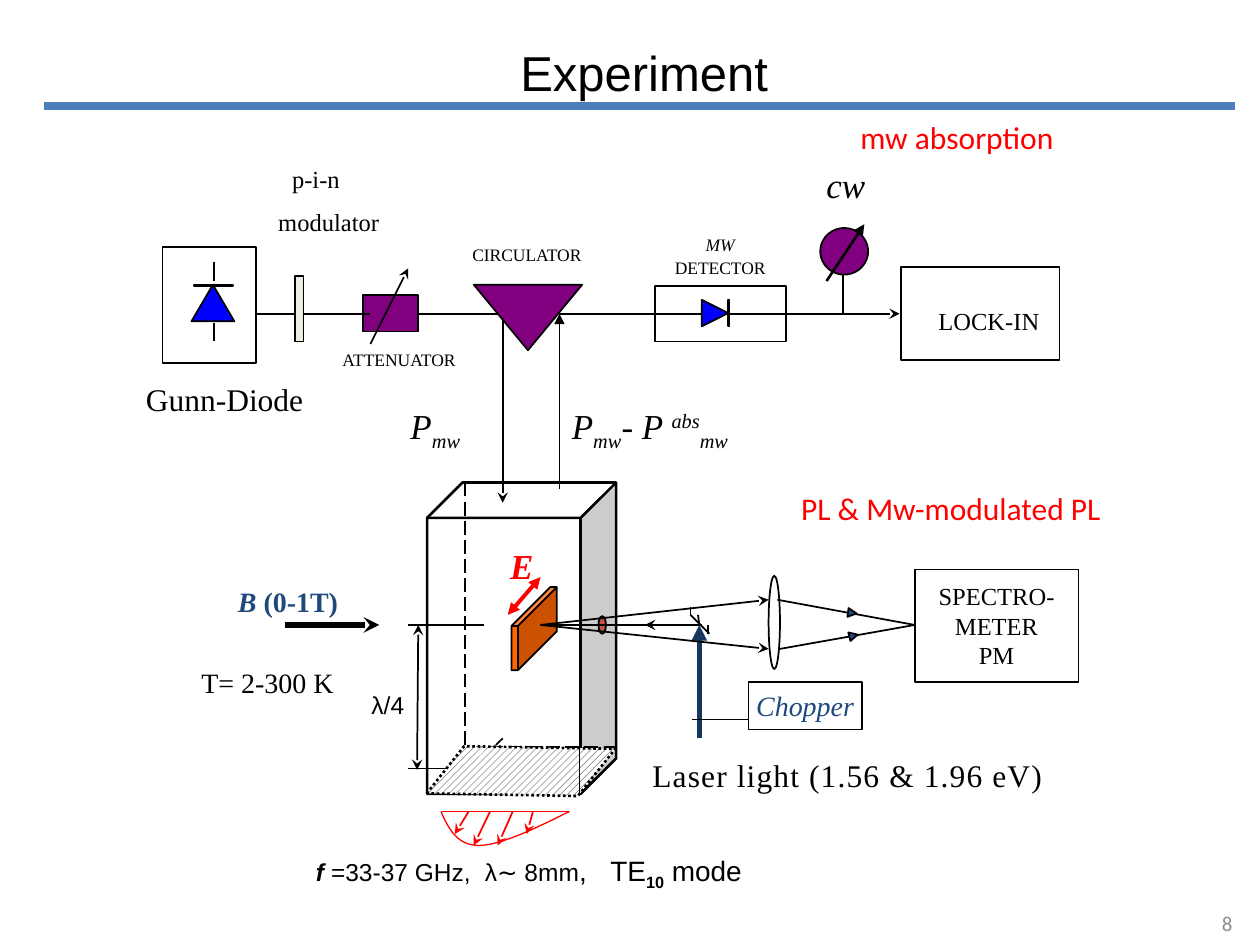
from lxml.etree import SubElement
from pptx import Presentation
from pptx.dml.color import RGBColor
from pptx.enum.dml import MSO_LINE_DASH_STYLE as Dash, MSO_PATTERN_TYPE as Pattern
from pptx.enum.shapes import MSO_CONNECTOR as Connector, MSO_SHAPE as Shape
from pptx.enum.text import MSO_ANCHOR as Anchor, MSO_AUTO_SIZE as AutoSize, PP_ALIGN as Align
from pptx.oxml.ns import qn
from pptx.util import Inches, Pt

COLORS = {
    "black": "000000", "white": "FFFFFF", "red": "FF0000", "blue": "0000FF",
    "purple": "800080", "orange": "FF6600", "navy": "1F497D", "laser": "17375E",
    "rose": "C0504D", "bar": "4F81BD", "rule": "4B7EBC", "cream": "EEECE1",
    "gray": "8C8C8C",
}
SERIF = "Times New Roman"
AXIS = 2.49
BEAM = 4.96


def rgb(name):
    """Return the named colour."""
    return RGBColor.from_string(COLORS[name])


def write_text(shape, paragraphs, font=SERIF, size=14, color="black", bold=False,
               italic=False, align=Align.LEFT, anchor=Anchor.TOP, wrap=True,
               leading=None, after=0, indents=(), spacing=0):
    """Write paragraphs of (text, overrides) runs into a shape."""
    frame = shape.text_frame
    frame.word_wrap, frame.auto_size, frame.vertical_anchor = wrap, AutoSize.NONE, anchor
    frame.margin_left = frame.margin_right = Inches(0.1)
    frame.margin_top = frame.margin_bottom = Inches(0.05)
    base = dict(font=font, size=size, color=color, bold=bold, italic=italic,
                spacing=spacing, baseline=0)
    for index, runs in enumerate(paragraphs):
        paragraph = frame.paragraphs[0] if index == 0 else frame.add_paragraph()
        paragraph.alignment, paragraph.space_after = align, Pt(after)
        if leading:
            paragraph.line_spacing = Pt(leading)
        if indents:
            paragraph._p.get_or_add_pPr().set("marL", str(Inches(indents[index])))
        for text, changes in [(runs, {})] if isinstance(runs, str) else runs:
            look = {**base, **changes}
            run = paragraph.add_run()
            run.text = text
            run.font.name, run.font.size = look["font"], Pt(look["size"])
            run.font.bold, run.font.italic = look["bold"], look["italic"]
            run.font.color.rgb = rgb(look["color"])
            for key, value in (("baseline", look["baseline"] * 1000),
                               ("spc", int(look["spacing"] * 100))):
                if value:
                    run._r.get_or_add_rPr().set(key, str(value))


def add_label(slide, box, *paragraphs, **style):
    """Add a text box."""
    write_text(slide.shapes.add_textbox(*map(Inches, box)), paragraphs, **style)


def add_part(slide, kind, box, fill="white", width=1, adjust=(), rotation=0):
    """Add a filled preset shape with a black outline."""
    shape = slide.shapes.add_shape(kind, *map(Inches, box))
    shape.shadow.inherit = False
    shape.fill.solid()
    shape.fill.fore_color.rgb = rgb(fill)
    shape.line.color.rgb, shape.line.width = rgb("black"), Pt(width)
    shape.rotation = rotation
    for index, value in enumerate(adjust):
        shape.adjustments[index] = value
    return shape


def add_line(slide, start, end, color="black", width=1, head=None, tail=None, dash=None):
    """Add a straight line with optional arrowheads."""
    line = slide.shapes.add_connector(Connector.STRAIGHT, *map(Inches, (*start, *end)))
    line.line.color.rgb, line.line.width = rgb(color), Pt(width)
    if dash:
        line.line.dash_style = dash
    properties = line._element.spPr
    for tag, arrow in (("a:headEnd", head), ("a:tailEnd", tail)):
        if arrow:
            SubElement(properties.find(qn("a:ln")), qn(tag)).set("type", arrow)
    SubElement(properties, qn("a:effectLst"))


def draw_cavity(slide):
    """Draw the resonator with its sample, field and height mark."""
    add_part(slide, Shape.CUBE, (3.39, 3.83, 1.5, 2.47), width=1.5, adjust=[0.187])
    add_part(slide, Shape.OVAL, (4.75, 4.89, 0.06, 0.14), "rose")
    for start, end in (((4.9, 5.93), (3.78, 5.93)), ((3.61, 6.23), (3.99, 5.86)),
                       ((3.69, 3.83), (3.69, 6.01))):
        add_line(slide, start, end, dash=Dash.LONG_DASH)
    add_part(slide, Shape.CUBE, (4.06, 4.66, 0.36, 0.66), "orange", adjust=[0.857])
    for y in (BEAM, 6.1):
        add_line(slide, (3.24, y), (3.84, y))
    add_line(slide, (3.32, BEAM), (3.31, 6.11), head="stealth", tail="stealth")
    floor = add_part(slide, Shape.PARALLELOGRAM, (3.39, 5.93, 1.49, 0.38),
                     width=1.5, adjust=[0.765], rotation=1)
    floor.fill.patterned()
    floor.fill.pattern = Pattern.WIDE_UPWARD_DIAGONAL
    floor.fill.fore_color.rgb, floor.fill.back_color.rgb = rgb("black"), rgb("white")
    floor.line.dash_style = Dash.ROUND_DOT
    add_line(slide, (4.6, 5.93), (4.6, 6.31))
    add_line(slide, (4.29, 4.58), (4.03, 4.88), "red", 2.25, "triangle", "triangle")
    add_line(slide, (2.26, BEAM), (3.01, BEAM), width=3, tail="stealth")


def draw_microwave_line(slide):
    """Draw the source, modulator, circulator, detector and lock-in."""
    add_line(slide, (3.99, AXIS), (3.99, 3.99), tail="stealth")
    add_line(slide, (4.44, 3.88), (4.44, AXIS), tail="triangle")
    add_line(slide, (2.86, AXIS), (4.14, AXIS))
    add_line(slide, (4.44, AXIS), (5.84, AXIS))
    add_line(slide, (5.79, AXIS), (7.14, AXIS), tail="stealth")
    add_part(slide, Shape.RECTANGLE, (7.15, 2.12, 1.26, 0.74))
    add_part(slide, Shape.RECTANGLE, (1.29, 1.96, 0.74, 0.92))
    add_part(slide, Shape.ISOSCELES_TRIANGLE, (1.52, 2.26, 0.34, 0.29), "blue")
    add_part(slide, Shape.RECTANGLE, (1.54, 2.26, 0.31, 0.01), "bar")
    for y in (2.08, 2.56):
        add_line(slide, (1.7, y), (1.7, y + 0.15))
    add_part(slide, Shape.ISOSCELES_TRIANGLE, (3.76, 2.26, 0.86, 0.52), "purple", rotation=180)
    add_part(slide, Shape.RECTANGLE, (5.2, 2.27, 1.04, 0.44))
    add_part(slide, Shape.ISOSCELES_TRIANGLE, (5.57, 2.38, 0.21, 0.21), "blue", rotation=90)
    add_part(slide, Shape.RECTANGLE, (5.78, 2.38, 0.01, 0.21), "bar")
    add_line(slide, (5.12, AXIS), (5.57, AXIS))
    add_line(slide, (5.79, AXIS), (6.84, AXIS))
    add_part(slide, Shape.RECTANGLE, (2.88, 2.34, 0.44, 0.29), "purple")
    add_line(slide, (2.94, 2.73), (3.24, 2.13), tail="stealth")
    add_line(slide, (2.04, AXIS), (2.94, AXIS))
    add_part(slide, Shape.RECTANGLE, (2.34, 2.19, 0.07, 0.52), "cream")
    add_line(slide, (6.69, AXIS), (6.69, 2.04), tail="triangle")
    add_part(slide, Shape.OVAL, (6.51, 1.81, 0.38, 0.37), "purple")
    add_line(slide, (6.56, 2.23), (6.86, 1.78), width=1.5, tail="triangle")


def draw_optics(slide):
    """Draw the laser path, lens, chopper and spectrometer."""
    add_line(slide, (5.55, 5.86), (5.55, BEAM), "laser", 3, tail="triangle")
    for start, end in (((5.57, BEAM), (4.36, BEAM)), ((5.48, 4.88), (5.63, 5.03)),
                       ((5.54, 4.88), (5.55, BEAM)), ((5.62, 5.03), (5.62, BEAM)),
                       ((5.48, 4.82), (5.48, 4.89)), ((5.49, 5.71), (5.94, 5.71))):
        add_line(slide, start, end)
    add_line(slide, (5.49, BEAM), (5.12, BEAM), tail="stealth")
    add_part(slide, Shape.OVAL, (6.1, 4.57, 0.09, 0.74))
    for lens_x, y, arrow_x, arrow_y, rotation in ((6.17, 4.76, 6.73, 4.83, 6.9),
                                                  (6.19, 5.15, 6.74, 5.01, 346)):
        add_line(slide, (4.29, BEAM), (6.1, y), tail="stealth")
        add_line(slide, (lens_x, y), (7.26, BEAM))
        add_part(slide, Shape.RIGHT_ARROW, (arrow_x, arrow_y, 0.07, 0.07), "navy",
                 adjust=[0.5, 1], rotation=rotation)
    centered = dict(align=Align.CENTER, anchor=Anchor.MIDDLE, wrap=False)
    spectrometer = add_part(slide, Shape.RECTANGLE, (7.26, 4.52, 1.3, 0.89))
    write_text(spectrometer, ["SPECTRO-", "METER", "PM"], **centered)
    chopper = add_part(slide, Shape.RECTANGLE, (5.94, 5.41, 0.9, 0.38))
    write_text(chopper, ["Chopper"], size=16, color="navy", italic=True, **centered)


def draw_mode_profile(slide):
    """Draw the field profile below the cavity."""
    top = 6.44
    for start_x, end_x, end_y in ((3.72, 3.61, 6.62), (4.07, 3.95, 6.71),
                                  (4.23, 4.18, 6.62), (3.89, 3.76, 6.71)):
        add_line(slide, (start_x, top), (end_x, end_y), "red", tail="stealth")
    add_line(slide, (3.51, top), (4.52, top), "red", 0.75)
    steps = 16
    curves = (((3.5, top), (3.56, 6.58), (3.63, 6.71), (3.8, 6.71)),
              ((3.8, 6.71), (3.97, 6.71), (4.24, 6.58), (4.52, top)))
    points = []
    for curve in curves:
        for step in range(1, steps + 1):
            t = step / steps
            weights = ((1 - t) ** 3, 3 * t * (1 - t) ** 2, 3 * t * t * (1 - t), t ** 3)
            points.append(tuple(Inches(sum(w * p[axis] for w, p in zip(weights, curve)))
                                for axis in (0, 1)))
    builder = slide.shapes.build_freeform(Inches(3.5), Inches(top))
    builder.add_line_segments(points, close=False)
    profile = builder.convert_to_shape()
    profile.shadow.inherit = False
    profile.fill.background()
    profile.line.color.rgb, profile.line.width = rgb("red"), Pt(0.75)


def add_labels(slide):
    """Add all free-standing labels."""
    lowered, raised, upright = {"baseline": -25}, {"baseline": 30}, {"italic": False}
    power = [("P", {}), ("mw", lowered)]
    symbol = dict(size=20, italic=True)
    add_label(slide, (2.85, 5.43, 0.57, 0.33), "λ/4", font="Arial", wrap=False)
    add_label(slide, (3.16, 3.16, 0.9, 0.43), power, **symbol)
    add_label(slide, (4.44, 3.16, 1.97, 0.44),
              power + [("- P ", {}), ("abs", raised), ("mw", lowered)], **symbol)
    add_label(slide, (3.95, 4.27, 0.39, 0.44), "E", color="red", bold=True, wrap=False, **symbol)
    add_label(slide, (6.46, 1.25, 0.75, 0.45), "cw", **symbol)
    add_label(slide, (7.35, 2.38, 1.14, 0.33), "LOCK-IN")
    add_label(slide, (1.06, 2.97, 1.47, 0.4), "Gunn-Diode", size=18, wrap=False)
    add_label(slide, (1.79, 4.59, 1.01, 0.37), [("B ", {}), ("(0-1T)", upright)],
              size=16, color="navy", bold=True, italic=True, wrap=False)
    add_label(slide, (1.5, 5.23, 1.39, 0.37), "T= 2-300 K", size=16, wrap=False)
    add_label(slide, (5.08, 5.95, 3.47, 0.4), "Laser light (1.56 & 1.96 eV)", size=18, spacing=0.65)
    add_label(slide, (5.14, 1.81, 1.15, 0.43), [("MW", {"italic": True})], "DETECTOR",
              size=10, align=Align.CENTER, after=1)
    add_label(slide, (3.65, 1.89, 1.25, 0.27), "CIRCULATOR", size=10)
    add_label(slide, (2.62, 2.72, 1.27, 0.27), "ATTENUATOR", size=10)
    add_label(slide, (2.11, 1.25, 1.05, 0.7), "p-i-n", "modulator", after=8, indents=(0.11, 0))
    large = {"size": 16}
    add_label(slide, (2.41, 6.71, 4.14, 0.42),
              [("f ", {"bold": True, "italic": True}), ("=33-37 GHz,", {}),
               (" ", {"spacing": 4}), ("λ∼ 8mm", {}), (",", large),
               (" ", {"size": 16, "spacing": 9}), ("TE", large),
               ("10", {"size": 16, "bold": True, "baseline": -25}), (" mode", large)],
              font="Arial", leading=23)
    heading = dict(font="Calibri", size=18, color="red")
    add_label(slide, (6.73, 0.89, 1.87, 0.4), "mw absorption", **heading)
    add_label(slide, (6.26, 3.83, 2.61, 0.4), "PL & Mw-modulated PL", wrap=False, **heading)
    add_label(slide, (7.55, 7.13, 2.33, 0.4), "8", font="Calibri", size=12, color="gray",
              align=Align.RIGHT, anchor=Anchor.MIDDLE)


def main():
    """Build and save the slide."""
    presentation = Presentation()
    presentation.slide_width, presentation.slide_height = Inches(10), Inches(7.5)
    slide = presentation.slides.add_slide(presentation.slide_layouts[5])
    title = slide.shapes.title
    title.left, title.top, title.width, title.height = map(Inches, (4.03, 0.29, 2.48, 0.57))
    write_text(title, ["Experiment"], font="Arial", size=28)
    add_line(slide, (0.35, 0.84), (9.8, 0.84), "rule", 4.25)
    draw_cavity(slide)
    draw_microwave_line(slide)
    draw_optics(slide)
    draw_mode_profile(slide)
    add_labels(slide)
    presentation.save("out.pptx")


if __name__ == "__main__":
    main()
